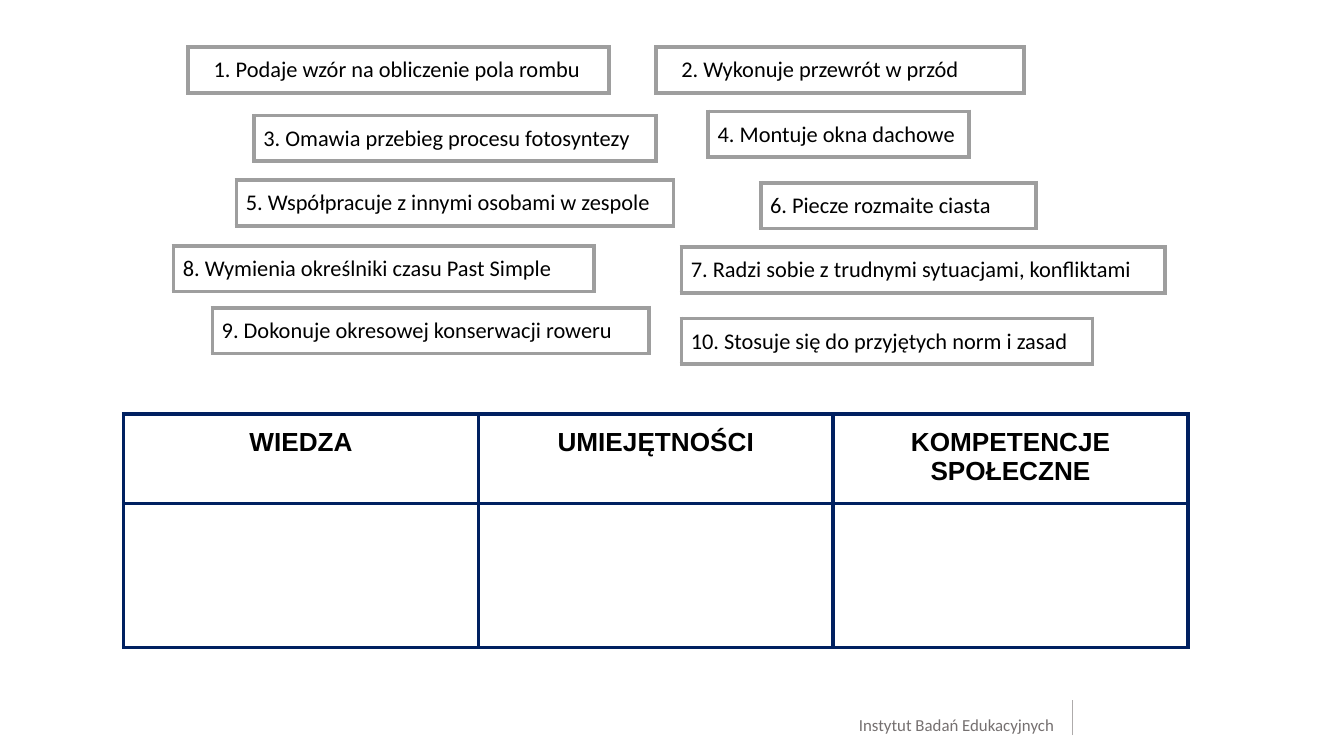
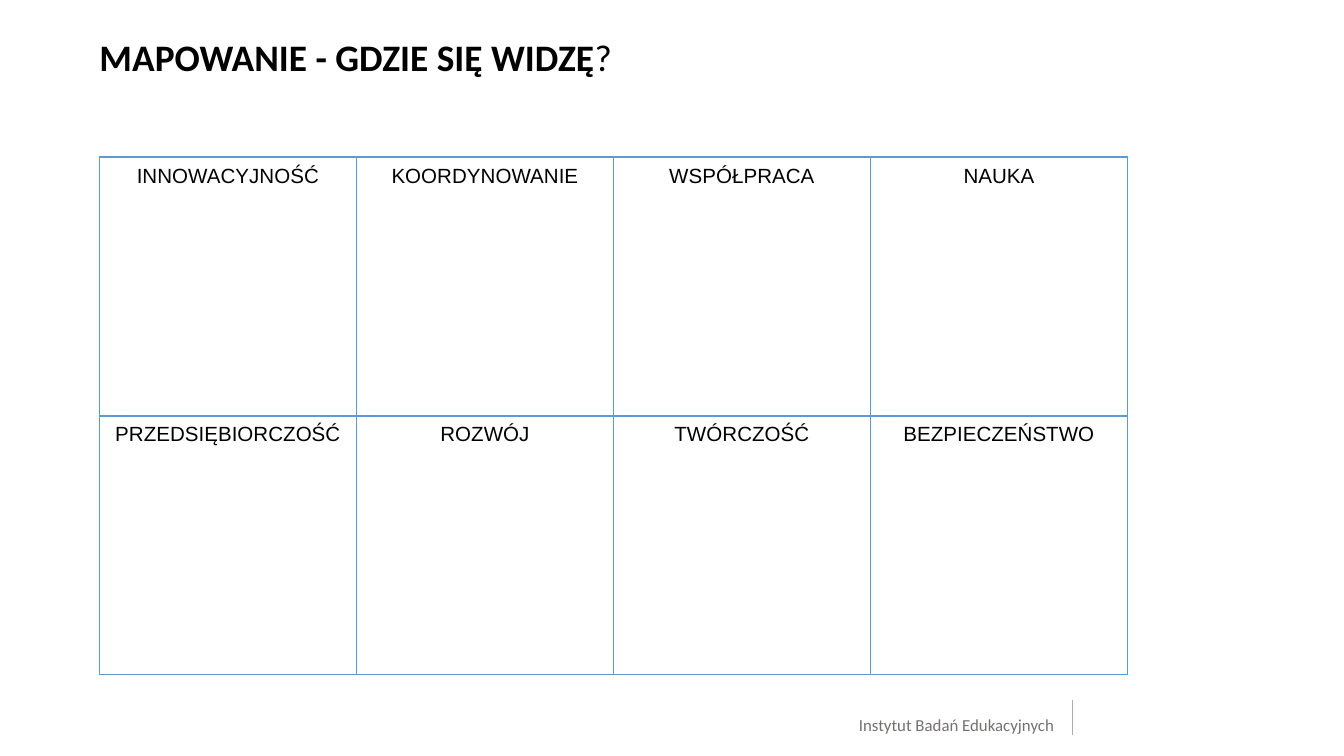
from lxml import etree
from pptx import Presentation
from pptx import util as u
from pptx.dml.color import RGBColor
from pptx.enum import shapes, text
from pptx.oxml.ns import qn

BLACK = "000000"
FOOTER_GREY = "757070"
RULE_GREY = "AEABAB"
CARD_GREY = "9E9E9E"
NAVY = "002060"
BLUE = "5B9BD5"
BODY, TABLE_FONT = "Calibri", "Arial"
ALIGN = text.PP_ALIGN


def rgb(value):
    return RGBColor.from_string(value)


class Deck:
    """Holds the presentation, its style and the current slide."""

    def __init__(self, width, height):
        self.prs = Presentation()
        self.prs.slide_width = u.Inches(width)
        self.prs.slide_height = u.Inches(height)
        self.slide = None

    def new_slide(self):
        self.slide = self.prs.slides.add_slide(self.prs.slide_layouts[6])
        self.footer()

    def style(self, font, size, color=BLACK, name=BODY, bold=False):
        font.name, font.size, font.bold = name, u.Pt(size), bold
        font.color.rgb = rgb(color)

    def text_box(self, left, top, width, height):
        box = self.slide.shapes.add_textbox(*map(u.Inches, (left, top, width, height)))
        frame = box.text_frame
        frame.word_wrap = True
        frame.margin_left = frame.margin_right = frame.margin_top = frame.margin_bottom = 0
        return frame.paragraphs[0]

    def footer(self):
        institute = self.text_box(6.17, 5.32, 1.67, 0.14)
        institute.text = "Instytut Badań Edukacyjnych"
        institute.alignment = ALIGN.RIGHT
        self.style(institute.font, 9, FOOTER_GREY)
        rule = self.slide.shapes.add_connector(
            shapes.MSO_CONNECTOR.STRAIGHT, *map(u.Inches, (7.98, 5.47, 7.98, 5.21)))
        rule.line.color.rgb = rgb(RULE_GREY)
        rule.line.width = u.Pt(0.75)
        etree.SubElement(rule._element.spPr, qn("a:effectLst"))

    def title(self, bold_part, plain_part):
        heading = self.text_box(0.74, 0.29, 6.86, 0.58)
        heading.line_spacing = 0.9
        for words, bold in ((bold_part, True), (plain_part, False)):
            run = heading.add_run()
            run.text = words
            self.style(run.font, 20, bold=bold)

    def border(self, cell, color, points):
        props = cell._tc.get_or_add_tcPr()
        for side in ("lnL", "lnR", "lnT", "lnB"):
            line = etree.SubElement(props, qn(f"a:{side}"), w=str(u.Pt(points)))
            fill = etree.SubElement(line, qn("a:solidFill"))
            etree.SubElement(fill, qn("a:srgbClr"), val=color)

    def table(self, left, top, width, row_heights, rows, line, margin, align,
              size, name=BODY, bold=False, spacing=None, indent=0):
        columns = len(rows[0])
        grid = self.slide.shapes.add_table(
            len(rows), columns,
            *map(u.Inches, (left, top, width, sum(row_heights)))).table
        grid.first_row = grid.horz_banding = False
        for column in grid.columns:
            column.width = u.Inches(width / columns)
        for row, height, labels in zip(grid.rows, row_heights, rows):
            row.height = u.Inches(height)
            for cell, label in zip(row.cells, labels):
                self.border(cell, *line)
                cell.fill.background()
                cell.margin_left = cell.margin_right = u.Inches(margin)
                cell.margin_top = cell.margin_bottom = u.Inches(margin)
                paragraph = cell.text_frame.paragraphs[0]
                paragraph.text = label
                paragraph.alignment = align
                if spacing:
                    paragraph.line_spacing = spacing
                if indent:
                    paragraph._p.get_or_add_pPr().set("marL", str(u.Inches(indent)))
                self.style(paragraph.font, size, name=name, bold=bold)

    def card(self, left, top, width, statement, indent=0):
        self.table(left, top, width, [0.34], [[statement]], (CARD_GREY, 2.25),
                   0.07, ALIGN.JUSTIFY, 12, indent=indent)


# Statements to sort: left, top, width, wording, indent
STATEMENTS = [
    (1.4, 0.35, 3.13, "1. Podaje wzór na obliczenie pola rombu", 0.12),
    (4.88, 0.35, 2.74, "2. Wykonuje przewrót w przód", 0.12),
    (1.89, 0.86, 2.99, "3. Omawia przebieg procesu fotosyntezy", 0),
    (5.27, 0.83, 1.94, "4. Montuje okna dachowe", 0),
    (1.76, 1.34, 3.25, "5. Współpracuje z innymi osobami w zespole", 0),
    (5.66, 1.36, 2.05, "6. Piecze rozmaite ciasta", 0),
    (5.07, 1.84, 3.6, "7. Radzi sobie z trudnymi sytuacjami, konfliktami", 0),
    (1.29, 1.83, 3.13, "8. Wymienia określniki czasu Past Simple", 0),
    (1.58, 2.29, 3.25, "9. Dokonuje okresowej konserwacji roweru", 0),
    (5.07, 2.37, 3.06, "10. Stosuje się do przyjętych norm i zasad", 0),
]
CATEGORIES = ["WIEDZA", "UMIEJĘTNOŚCI", "KOMPETENCJE SPOŁECZNE"]
AREAS = [
    ["INNOWACYJNOŚĆ", "KOORDYNOWANIE", "WSPÓŁPRACA", "NAUKA"],
    ["PRZEDSIĘBIORCZOŚĆ", "ROZWÓJ", "TWÓRCZOŚĆ", "BEZPIECZEŃSTWO"],
]


def main():
    deck = Deck(10, 10 * 9 / 16)

    # Slide 1: statements and the three categories
    deck.new_slide()
    for statement in STATEMENTS:
        deck.card(*statement)
    deck.table(0.92, 3.08, 7.92, [0.65, 1.07], [CATEGORIES, [""] * 3],
               (NAVY, 2.25), 0.1, ALIGN.CENTER, 14, TABLE_FONT, bold=True)

    # Slide 2: map of areas
    deck.new_slide()
    deck.title("MAPOWANIE - GDZIE SIĘ WIDZĘ", "?")
    deck.table(0.74, 1.17, 7.65, [3.85 / 2] * 2, AREAS, (BLUE, 1), 0.07,
               ALIGN.CENTER, 11, TABLE_FONT, spacing=0.9)

    deck.prs.save("out.pptx")


if __name__ == "__main__":
    main()
